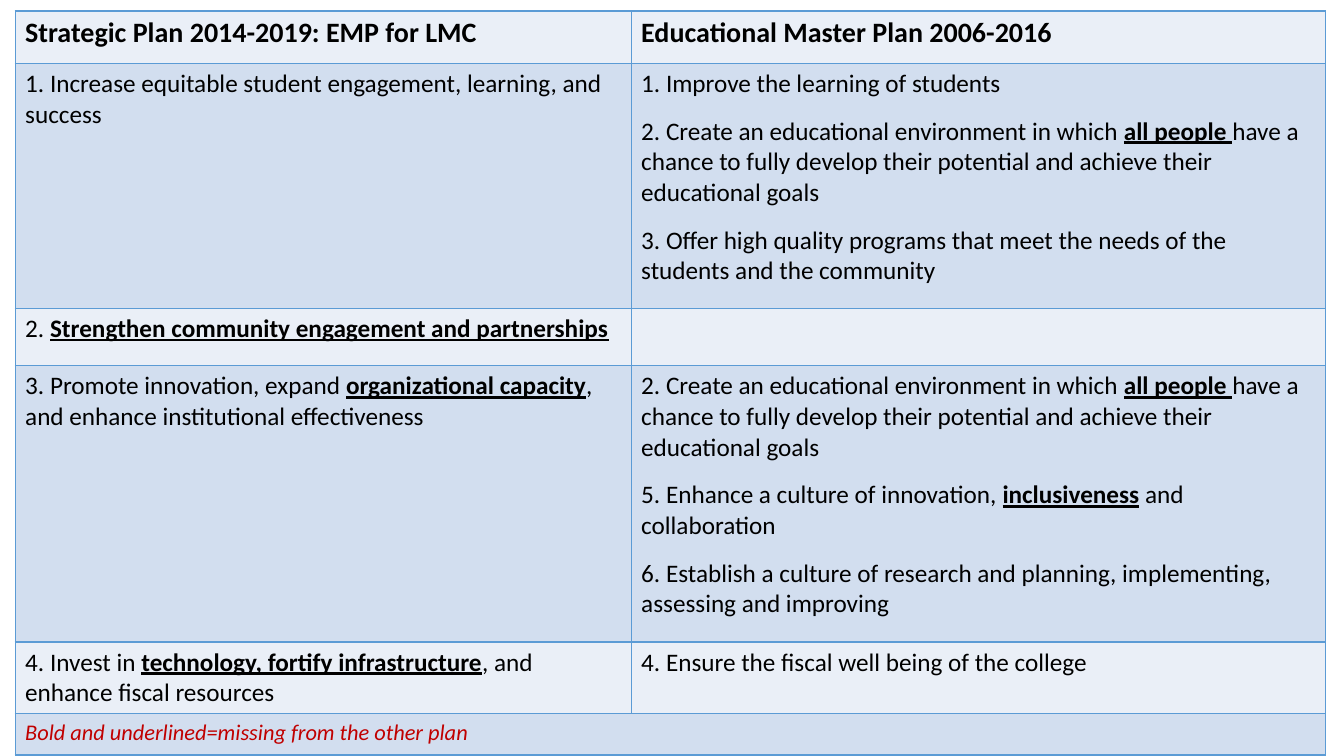
from lxml import etree
from pptx import Presentation
from pptx import util as u
from pptx.dml.color import RGBColor
from pptx.oxml import ns

BODY = dict(size=u.Pt(18), bold=False)
HEADER = dict(size=u.Pt(20), bold=True)
LEGEND = dict(size=u.Pt(16), italic=True)
MISSING = dict(bold=True, underline=True)
BLACK, RED, BORDER = "000000", "C00000", "5B9BD5"
BANDS = "EAEFF7", "D2DEEF"

COLUMN_WIDTHS = 6.11, 6.89
ROW_HEIGHTS = 0.52, 2.43, 0.57, 2.74, 0.71, 0.41
ALL_PEOPLE = ("2. Create an educational environment in which *all people *have a "
              "chance to fully develop their potential and achieve their educational goals")
# Each cell is a list of paragraphs; text between asterisks is missing from the other plan.
GOALS = [
    (["1. Increase equitable student engagement, learning, and success"],
     ["1. Improve the learning of students",
      ALL_PEOPLE,
      "3. Offer high quality programs that meet the needs of the students and the community"]),
    (["2. *Strengthen community engagement and partnerships*"], []),
    (["3. Promote innovation, expand *organizational capacity*, "
      "and enhance institutional effectiveness"],
     [ALL_PEOPLE,
      "5. Enhance a culture of innovation, *inclusiveness* and collaboration",
      "6. Establish a culture of research and planning, implementing, assessing and improving"]),
    (["4. Invest in *technology, fortify infrastructure*, and enhance fiscal resources"],
     ["4. Ensure the fiscal well being of the college"]),
]


def rgb(value):
    return RGBColor.from_string(value)


def set_borders(cell, color, width):
    """Draw all four edges; they must precede the fill in the cell properties."""
    tcPr = cell._tc.get_or_add_tcPr()
    for i, edge in enumerate(("lnL", "lnR", "lnT", "lnB")):
        ln = etree.Element(ns.qn(f"a:{edge}"), w=str(u.Pt(width)))
        fill = etree.SubElement(ln, ns.qn("a:solidFill"))
        etree.SubElement(fill, ns.qn("a:srgbClr"), val=color)
        tcPr.insert(i, ln)


def write(cell, paragraphs, style, color=BLACK):
    tf = cell.text_frame
    for i, line in enumerate(paragraphs):
        p = tf.add_paragraph() if i else tf.paragraphs[0]
        p.space_before = u.Pt(12 if i else 0)
        for j, part in enumerate(line.split("*")):
            if not part:
                continue
            r = p.add_run()
            r.text = part
            r.font.name = "Calibri"
            r.font.color.rgb = rgb(color)
            for name, value in {**style, **(MISSING if j % 2 else {})}.items():
                setattr(r.font, name, value)


def add_plan_table(s, left, top):
    width, height = sum(COLUMN_WIDTHS), sum(ROW_HEIGHTS)
    table = s.shapes.add_table(len(ROW_HEIGHTS), len(COLUMN_WIDTHS),
                               *map(u.Inches, (left, top, width, height))).table
    table.first_row = table.horz_banding = False
    for column, w in zip(table.columns, COLUMN_WIDTHS):
        column.width = u.Inches(w)
    for i, (row, h) in enumerate(zip(table.rows, ROW_HEIGHTS)):
        row.height = u.Inches(h)
        for cell in row.cells:
            cell.fill.solid()
            cell.fill.fore_color.rgb = rgb(BANDS[i % 2])
            set_borders(cell, BORDER, 1)

    write(table.cell(0, 0), ["Strategic Plan 2014-2019: EMP for LMC"], HEADER)
    write(table.cell(0, 1), ["Educational Master Plan 2006-2016"], HEADER)
    for i, goals in enumerate(GOALS, 1):
        for j, paragraphs in enumerate(goals):
            write(table.cell(i, j), paragraphs, BODY)
    last = len(ROW_HEIGHTS) - 1
    table.cell(last, 0).merge(table.cell(last, 1))
    write(table.cell(last, 0), ["Bold and underlined=missing from the other plan"], LEGEND, RED)


def main():
    prs = Presentation()
    prs.slide_width, prs.slide_height = u.Inches(13.33), u.Inches(7.5)
    s = prs.slides.add_slide(prs.slide_layouts[6])
    add_plan_table(s, 0.15, 0.11)
    prs.save("out.pptx")


if __name__ == "__main__":
    main()
